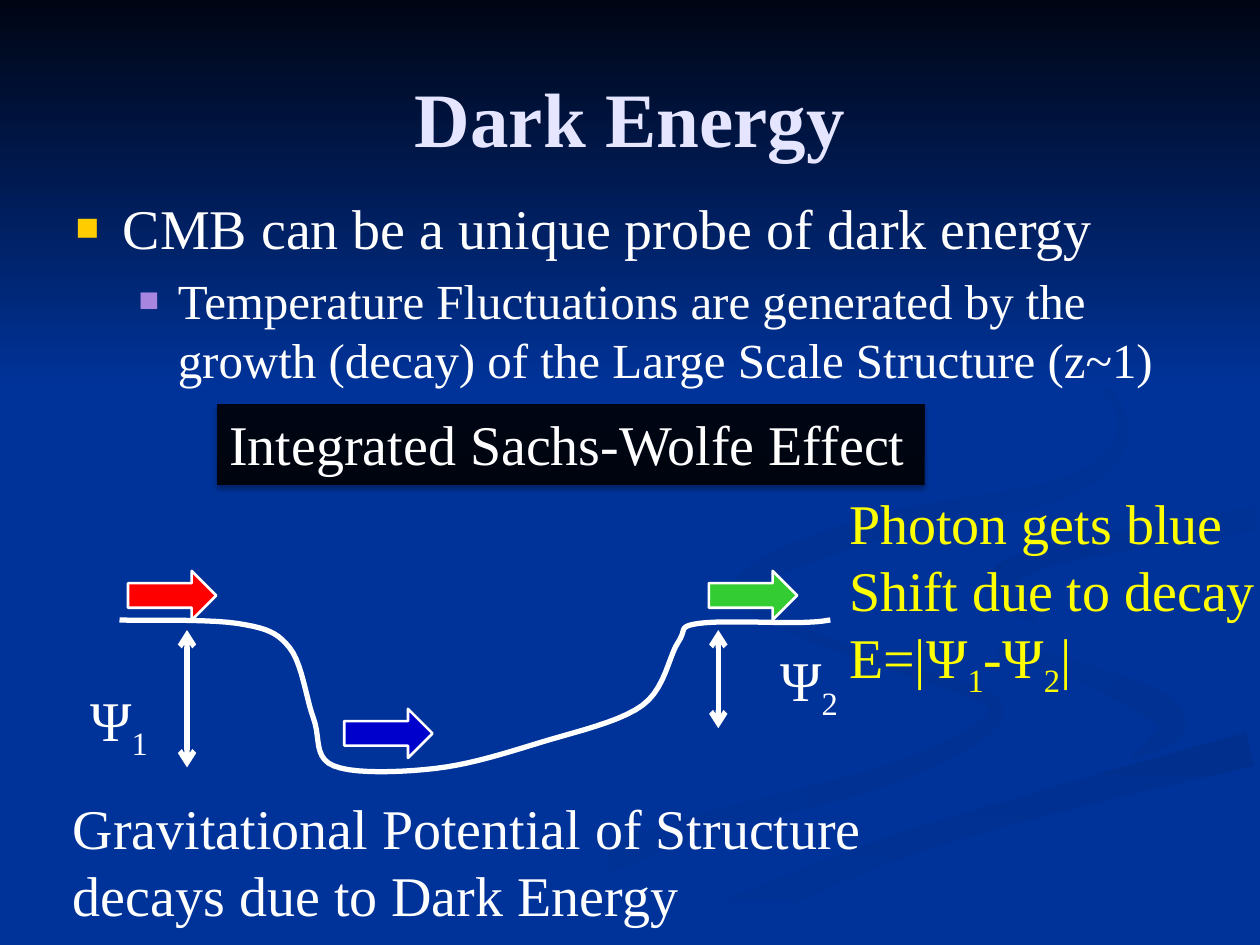
from math import hypot

from lxml.etree import SubElement as Sub
from pptx import Presentation
from pptx.dml.color import RGBColor as RGB
from pptx.enum.shapes import MSO_CONNECTOR as LINK, MSO_SHAPE as SHAPE
from pptx.enum.text import MSO_ANCHOR as ANCHOR, MSO_AUTO_SIZE as SIZE, PP_ALIGN as ALIGN
from pptx.oxml.ns import qn
from pptx.util import Cm, Pt

FONT = "Times New Roman"
WIDTH, HEIGHT = 25.4, 19.05
GRAIN = 1000

BLUE = RGB(0x00, 0x33, 0x99)
NIGHT = RGB(0x00, 0x05, 0x14)
DEEP = RGB(0x00, 0x2F, 0x8E)
DIM = RGB(0x00, 0x31, 0x93)
BLACK = RGB(0x00, 0x04, 0x0F)
WHITE = RGB(0xFF, 0xFF, 0xFF)
PALE = RGB(0xE5, 0xE5, 0xFF)
GOLD = RGB(0xFF, 0xCC, 0x00)
MAUVE = RGB(0xA8, 0x86, 0xE0)
YELLOW = RGB(0xFF, 0xFF, 0x00)
RED = RGB(0xFF, 0x00, 0x00)
NAVY = RGB(0x00, 0x00, 0xCC)
GREEN = RGB(0x33, 0xCC, 0x33)

TAIL = [(14.6, 11.7, 0.05), (15.8, 12.6, 0.1), (18.1, 13.45, 0.1), (20.1, 14.3, 0.15),
        (18.1, 15.55, 0.2), (13.5, 16.85, 0.25), (8.4, 19, 0.35)]
RIVER = [(25.2, 10.1, 0.2), (20.5, 11, 0.3), (19.1, 12, 0.5), (22, 13.2, 0.4),
         (24.5, 14.5, 0.4), (20, 16.3, 0.2), (12.5, 18.9, 0.2)]
CREST = [(18.4, 11.8, 0), (19.3, 12.8, 0.1), (21.8, 13.55, 0.2), (23.6, 14.5, 0.3),
         (22.75, 15.35, 0)]
SHORE = [(25.2, 15.1, 0.35), (21, 16.2, 0.25), (17.6, 17.25, 0.25), (13.7, 18.9, 0.35)]
HOOK = [(20.9, 12.55, 0), (20.15, 11.85, 0.3), (21.2, 11.2, 0.2), (25.3, 10.45, 0.23)]
LOOP = [(19.4, 5.9, 0), (21.6, 7.15, 0.08), (22.65, 8.65, 0.1), (21.4, 9.85, 0.2),
        (17.6, 10.65, 0.25), (15.05, 11.75, 0.2), (15.8, 12.65, 0)]
WELL = [(2.41, 12.5), (4.8, 12.57), (5.84, 13.06), (6.32, 14.48), (6.73, 15.44),
        (8.79, 15.49), (10.92, 14.96), (12.95, 14.22), (13.67, 12.95), (14.07, 12.57),
        (16.13, 12.55), (16.74, 12.5)]


def smooth(knots, steps=10):
    ends = [knots[0], *knots, knots[-1]]
    dots = [knots[0]]
    for four in zip(ends, ends[1:], ends[2:], ends[3:]):
        for n in range(1, steps + 1):
            t = n / steps
            dots.append(tuple(
                b + t * (c - a + t * (2 * a - 5 * b + 4 * c - d
                                      + t * (3 * b - a - 3 * c + d))) / 2
                for a, b, c, d in zip(*four)))
    return dots


def widen(spine):
    dots = smooth(spine)
    near, far = [], []
    for prev, (x, y, half), post in zip(dots[:1] + dots, dots, dots[1:] + dots[-1:]):
        dx, dy = post[0] - prev[0], post[1] - prev[1]
        size = hypot(dx, dy)
        across, down = -half * dy / size, half * dx / size
        near.append((x + across, y + down))
        far.append((x - across, y - down))
    return [(min(x, WIDTH), min(y, HEIGHT)) for x, y in near + far[::-1]]


class Deck:
    def __init__(self):
        self.file = Presentation()
        self.file.slide_width, self.file.slide_height = Cm(WIDTH), Cm(HEIGHT)
        self.slide = self.file.slides.add_slide(self.file.slide_layouts[1])
        self.shapes = self.slide.shapes
        self.slide.background.fill.solid()
        self.slide.background.fill.fore_color.rgb = BLUE

    def style(self, para, size, color, bold=False):
        font = para.font
        font.name, font.size, font.bold = FONT, Pt(size), bold
        font.color.rgb = color

    def stroke(self, line, weight):
        line.color.rgb, line.width = WHITE, Pt(weight)

    def blend(self, shape, first, last, angle):
        shape.fill.gradient()
        shape.fill.gradient_angle = angle
        for stop, color in zip(shape.fill.gradient_stops, (first, last)):
            stop.color.rgb = color

    def trace(self, dots, close):
        dots = [(x * GRAIN, y * GRAIN) for x, y in dots]
        pen = self.shapes.build_freeform(*dots[0], scale=Cm(1) / GRAIN)
        pen.add_line_segments(dots[1:], close=close)
        shape = pen.convert_to_shape()
        shape.shadow.inherit = False
        return shape

    def patch(self, dots, first, last, angle):
        shape = self.trace(dots, True)
        self.blend(shape, first, last, angle)
        shape.line.fill.background()

    def curve(self, knots):
        shape = self.trace(smooth(knots), False)
        shape.fill.background()
        self.stroke(shape.line, 3)

    def hold(self, index, *box):
        shape = self.slide.placeholders[index]
        shape.left, shape.top, shape.width, shape.height = map(Cm, box)
        self.shapes._spTree.append(shape._element)
        return shape.text_frame

    def title(self, text, *box):
        frame = self.hold(0, *box)
        frame.text, frame.vertical_anchor = text, ANCHOR.MIDDLE
        para = frame.paragraphs[0]
        para.alignment = ALIGN.CENTER
        self.style(para, 44, PALE, True)

    def body(self, items, *box):
        frame = self.hold(1, *box)
        frame.text = "\n".join(item[0] for item in items)
        for level, (para, item) in enumerate(zip(frame.paragraphs, items)):
            _, size, color, left, hang = item
            para.level, para.space_before = level, Pt(size / 5)
            self.style(para, size, WHITE)
            props = para._p.get_or_add_pPr()
            props.set("marL", str(Cm(left)))
            props.set("indent", str(-Cm(hang)))
            mark = Sub(props, qn("a:buClr"))
            Sub(mark, qn("a:srgbClr"), val=str(color))
            Sub(props, qn("a:buSzPct"), val="70000")
            Sub(props, qn("a:buFont"), typeface=FONT)
            Sub(props, qn("a:buChar"), char="■")
            props.append(props.find(qn("a:defRPr")))

    def text(self, lines, *box, color=WHITE):
        shape = self.shapes.add_textbox(*map(Cm, box))
        frame = shape.text_frame
        frame.word_wrap, frame.auto_size = False, SIZE.SHAPE_TO_FIT_TEXT
        for i, line in enumerate(lines):
            para = frame.add_paragraph() if i else frame.paragraphs[0]
            self.style(para, 32, color)
            for n, part in enumerate(line.split("_")):
                if part:
                    run = para.add_run()
                    run.text = part
                    if n % 2:
                        run._r.get_or_add_rPr().set("baseline", "-25000")
        return shape

    def label(self, line, *box):
        shape = self.text([line], *box)
        self.blend(shape, BLACK, NIGHT, 90)
        shade = Sub(Sub(shape._element.spPr, qn("a:effectLst")), qn("a:outerShdw"),
                    blurRad=str(Pt(3.1)), dist=str(Pt(1.8)), dir="5400000",
                    rotWithShape="0")
        Sub(Sub(shade, qn("a:srgbClr"), val="000000"), qn("a:alpha"), val="35000")

    def span(self, x, top, base):
        link = self.shapes.add_connector(LINK.STRAIGHT, Cm(x), Cm(top), Cm(x), Cm(base))
        self.stroke(link.line, 3)
        edge = link.line._get_or_add_ln()
        for end in ("a:headEnd", "a:tailEnd"):
            Sub(edge, qn(end), type="arrow")
        Sub(link._element.spPr, qn("a:effectLst"))

    def arrow(self, left, top, color):
        shape = self.shapes.add_shape(SHAPE.RIGHT_ARROW, Cm(left), Cm(top), Cm(1.78), Cm(0.99))
        shape.shadow.inherit = False
        shape.fill.solid()
        shape.fill.fore_color.rgb = color
        self.stroke(shape.line, 1.5)


def main():
    deck = Deck()
    for spine, first, last, angle in (
            (TAIL, BLUE, DIM, 0), (RIVER, BLUE, BLUE, 0), (CREST, BLUE, DIM, 315),
            (SHORE, DEEP, BLUE, 270), (HOOK, DEEP, BLUE, 315), (LOOP, DEEP, BLUE, 315)):
        deck.patch(widen(spine), first, last, angle)
    sky = 7.82
    deck.patch([(0, 0), (0, sky), (WIDTH, sky), (WIDTH, 0)], NIGHT, BLUE, 270)

    deck.title("Dark Energy", 1.27, 0.76, 22.86, 3.18)
    deck.body([
        ("CMB can be a unique probe of dark energy", 32, GOLD, 0.95, 0.95),
        ("Temperature Fluctuations are generated by the growth (decay) "
         "of the Large Scale Structure (z~1)", 28, MAUVE, 2.06, 0.79),
    ], 1.27, 3.78, 22.86, 12.57)
    deck.label("Integrated Sachs-Wolfe Effect", 4.37, 8.14, 14.27, 1.63)

    deck.curve(WELL)
    for x, base in ((3.77, 15.47), (14.48, 14.68)):
        deck.span(x, 12.7, base)
    for name, left, top in (("Ψ_1", 1.57, 13.69), ("Ψ_2", 15.48, 12.88)):
        deck.text([name], left, top, 1.8, 1.63)
    for left, top, color in ((2.58, 11.51, RED), (6.94, 14.29, NAVY), (14.29, 11.51, GREEN)):
        deck.arrow(left, top, color)

    deck.text(["Photon gets blue", "Shift due to decay", "E=|Ψ_1_-Ψ_2_|"],
              16.87, 9.72, 8.79, 4.37, color=YELLOW)
    deck.text(["Gravitational Potential of Structure", "decays due to Dark Energy"],
              1.22, 15.87, 16.84, 3)
    deck.file.save("out.pptx")


if __name__ == "__main__":
    main()
